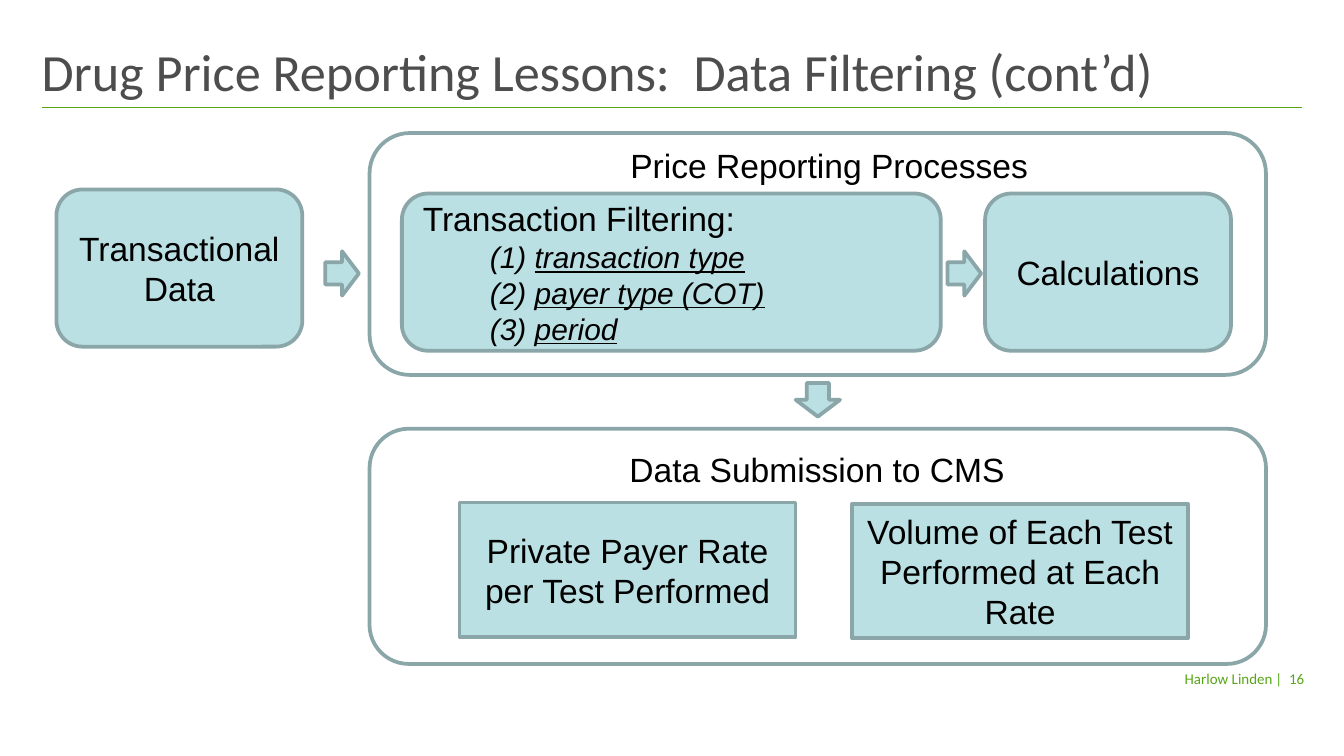
"""Build the data filtering flow slide."""
from lxml import etree
from pptx import Presentation
from pptx import util as u
from pptx.dml.color import RGBColor
from pptx.enum import shapes, text
from pptx.oxml.ns import qn

HUES = {"green": "58A618", "gray": "4D4D4D", "edge": "8AA6A8",
        "fill": "BBE0E3", "ink": "000000"}
KIND = shapes.MSO_SHAPE
SIDE = text.PP_ALIGN
MID = text.MSO_ANCHOR.MIDDLE
LOW = text.MSO_ANCHOR.BOTTOM
TOP = text.MSO_ANCHOR.TOP
GROW = text.MSO_AUTO_SIZE.SHAPE_TO_FIT_TEXT
FIXED = text.MSO_AUTO_SIZE.NONE
PAD = (0.1, 0.05, 0.1, 0.05)

TITLE = "Drug Price Reporting Lessons:  Data Filtering (cont’d)"
FIRM, PAGE = "Harlow Linden", "|  16"
RULE = (9.69, 0.8, 0.31, 0.8)
FRAMES = [(2.75, 0.99, 6.67, 1.8), (2.75, 3.19, 6.67, 1.75)]
HEADS = [("Price Reporting Processes", (3.67, 1.03, 5, 0.4)),
         ("Data Submission to CMS", (3.33, 3.29, 5.5, 0.4))]
BOXES = [
    (KIND.ROUNDED_RECTANGLE, "Transactional Data", (0.42, 1.41, 1.83, 1.17)),
    (KIND.ROUNDED_RECTANGLE, "Calculations", (7.33, 1.44, 1.83, 1.17)),
    (KIND.RECTANGLE, "Private Payer Rate per Test Performed", (3.42, 3.74, 2.5, 1)),
    (KIND.RECTANGLE, "Volume of Each Test Performed at Each Rate", (6.34, 3.75, 2.5, 1)),
]
FILTER = ("Transaction Filtering:", (2.99, 1.44, 4.01, 1.17))
STEPS = [[("(1) ", "transaction type"), ("(2) ", "payer type (COT)")],
         [("(3) ", "period")]]
ARROWS = [(7.05, 1.87, 0), (2.42, 1.87, 0), (5.96, 2.81, 90)]

deck = Presentation()
deck.slide_width = u.Inches(10)
deck.slide_height = deck.slide_width * 9 // 16
slide = deck.slides.add_slide(deck.slide_layouts[6])


def color(name):
    return RGBColor.from_string(HUES[name])


def add_run(para, words, size=18, hue="ink", face="Arial", **style):
    run = para.add_run()
    run.text = words
    font = run.font
    font.size, font.name = u.Pt(size), face
    font.color.rgb = color(hue)
    for key, value in style.items():
        setattr(font, key, value)


def set_frame(shape, anchor, pad=PAD, wrap=True, fit=FIXED):
    frame = shape.text_frame
    frame.word_wrap, frame.vertical_anchor = wrap, anchor
    frame.auto_size = fit
    (frame.margin_left, frame.margin_top,
     frame.margin_right, frame.margin_bottom) = map(u.Inches, pad)
    return frame


def add_label(words, spot, side, anchor=TOP, pad=PAD, wrap=True, fit=FIXED, **style):
    box = slide.shapes.add_textbox(*map(u.Inches, spot))
    para = set_frame(box, anchor, pad, wrap, fit).paragraphs[0]
    para.alignment = side
    add_run(para, words, **style)


def add_form(kind, spot, fill="fill"):
    form = slide.shapes.add_shape(kind, *map(u.Inches, spot))
    form.shadow.inherit = False
    if fill:
        form.fill.solid()
        form.fill.fore_color.rgb = color(fill)
    else:
        form.fill.background()
    form.line.color.rgb, form.line.width = color("edge"), u.Pt(2)
    return form


rule = slide.shapes.add_connector(shapes.MSO_CONNECTOR.STRAIGHT, *map(u.Inches, RULE))
rule.line.width = u.Pt(0.5)
rule.line.fill.solid()
rule.line.fill.fore_color.rgb = color("green")
etree.SubElement(rule._element.spPr, qn("a:effectLst"))

foot = {"size": 8, "hue": "green", "face": "Calibri"}
add_label(FIRM, (6.3, 4.93, 3.17, 0.24), SIDE.RIGHT, MID, (0, 0.05, 0, 0.05), **foot)
add_label(PAGE, (9.49, 4.93, 0.33, 0.24), SIDE.LEFT, MID, (0, 0.05, 0.1, 0.05),
          False, GROW, **foot)
add_label(TITLE, (0.31, 0.31, 9.37, 0.49), SIDE.LEFT, LOW, (0, 0.04, 0, 0.04),
          size=28, hue="gray", face="Calibri")

for spot in FRAMES:
    add_form(KIND.ROUNDED_RECTANGLE, spot, None)
for words, spot in HEADS:
    add_label(words, spot, SIDE.CENTER, fit=GROW)
for kind, words, spot in BOXES:
    para = set_frame(add_form(kind, spot), MID).paragraphs[0]
    para.alignment = SIDE.CENTER
    add_run(para, words)

head, spot = FILTER
frame = set_frame(add_form(KIND.ROUNDED_RECTANGLE, spot), MID)
para = frame.paragraphs[0]
para.alignment = SIDE.LEFT
add_run(para, head)
for group in STEPS:
    para = frame.add_paragraph()
    para.level, para.alignment = 1, SIDE.LEFT
    props = para._p.get_or_add_pPr()
    props.set("marL", str(u.Inches(0.5)))
    props.set("indent", "0")
    for row, (num, step) in enumerate(group):
        if row:
            para.add_line_break()
        add_run(para, num, 16, italic=True)
        add_run(para, step, 16, italic=True, underline=True)

for left, top, turn in ARROWS:
    add_form(KIND.RIGHT_ARROW, (left, top, 0.25, 0.33)).rotation = turn

deck.save("out.pptx")
